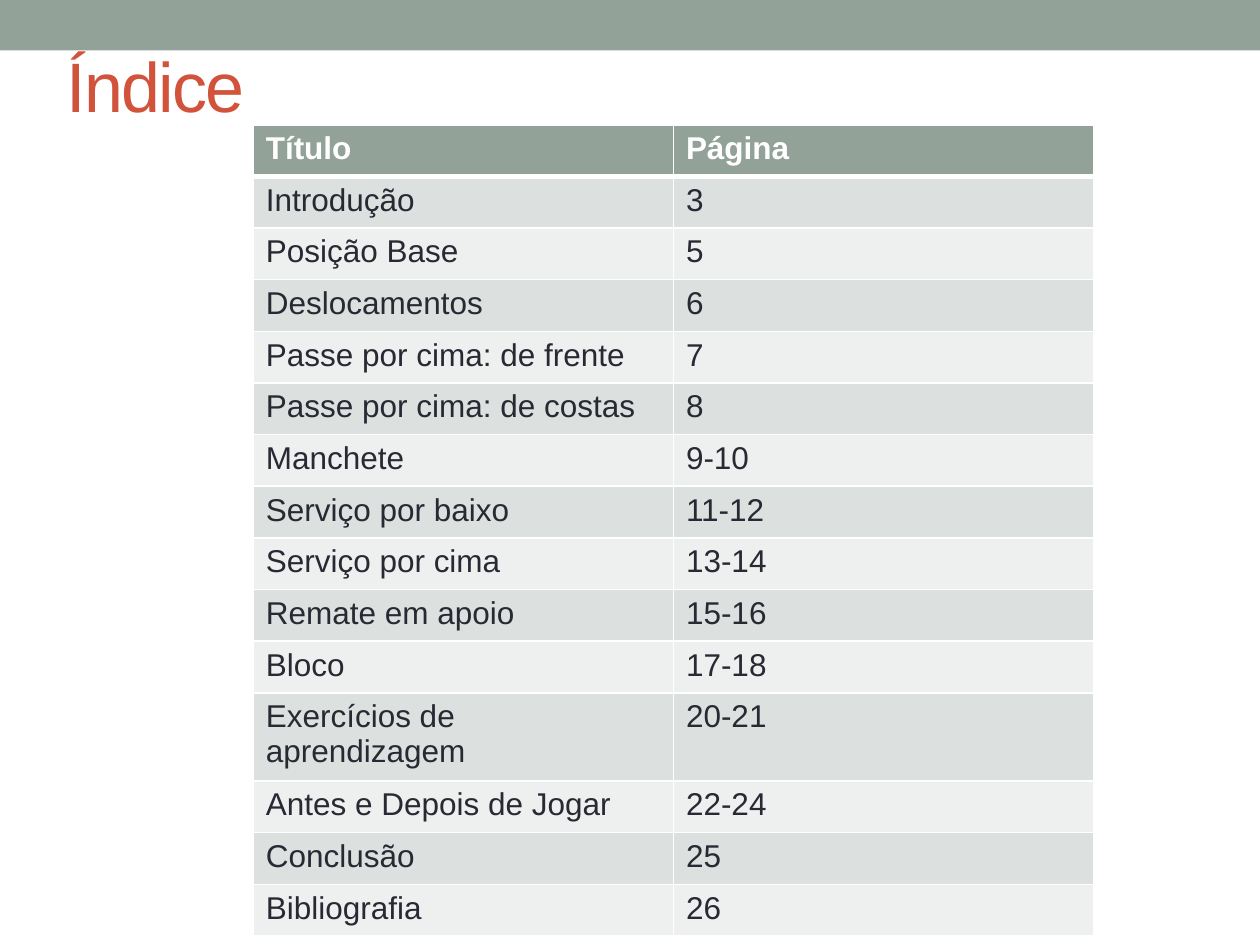
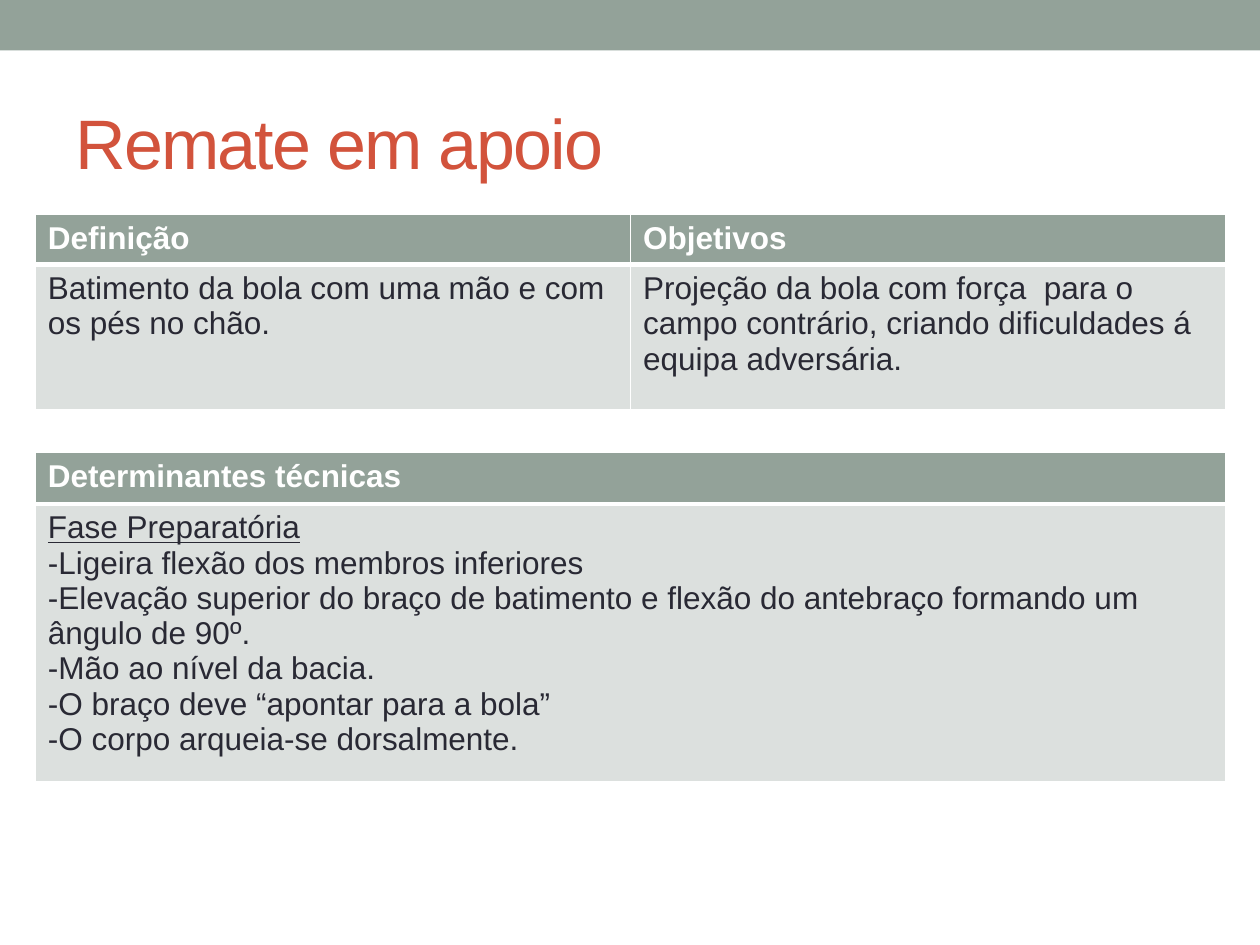
from pptx import Presentation
from pptx.dml.color import RGBColor
from pptx.enum.shapes import MSO_SHAPE
from pptx.enum.text import MSO_ANCHOR
from pptx.oxml.ns import qn
from pptx.util import Inches, Pt
from lxml.etree import SubElement

SAGE = RGBColor(0x93, 0xA2, 0x99)
RUST = RGBColor(0xD2, 0x53, 0x3C)
INK = RGBColor(0x29, 0x29, 0x34)
WHITE = RGBColor(0xFF, 0xFF, 0xFF)
ROW_FILLS = (RGBColor(0xDC, 0xE0, 0xDE), RGBColor(0xEE, 0xF0, 0xEF))
FONT = "Arial"

INDEX = [
    ("Título", "Página"),
    ("Introdução", "3"),
    ("Posição Base", "5"),
    ("Deslocamentos", "6"),
    ("Passe por cima: de frente", "7"),
    ("Passe por cima: de costas", "8"),
    ("Manchete", "9-10"),
    ("Serviço por baixo", "11-12"),
    ("Serviço por cima", "13-14"),
    ("Remate em apoio", "15-16"),
    ("Bloco", "17-18"),
    ("Exercícios de aprendizagem", "20-21"),
    ("Antes e Depois de Jogar", "22-24"),
    ("Conclusão", "25"),
    ("Bibliografia", "26"),
]
DEFINITION = [
    ("Definição", "Objetivos"),
    ("Batimento da bola com uma mão e com os pés no chão.",
     "Projeção da bola com força  para o campo contrário, "
     "criando dificuldades á equipa adversária."),
]
TECHNIQUE_STEPS = [
    "Fase Preparatória",
    "-Ligeira flexão dos membros inferiores",
    "-Elevação superior do braço de batimento e flexão do antebraço "
    "formando um ângulo de 90º.",
    "-Mão ao nível da bacia.",
    "-O braço deve “apontar para a bola”",
    "-O corpo arqueia-se dorsalmente.",
]
TECHNIQUE = [("Determinantes técnicas",), ("\n".join(TECHNIQUE_STEPS),)]


def write(tf, text, size=18, color=INK, bold=False, spacing=None):
    """Fill a text frame, one paragraph for each line of text."""
    for i, line in enumerate(text.split("\n")):
        p = tf.add_paragraph() if i else tf.paragraphs[0]
        r = p.add_run()
        r.text = line
        r.font.name = FONT
        r.font.size = Pt(size)
        r.font.bold = bold
        r.font.color.rgb = color
        if spacing is not None:
            r._r.get_or_add_rPr().set("spc", str(spacing * 100))


def set_borders(cell, top=1, bottom=1):
    """Draw white cell borders; widths are in points."""
    tcPr = cell._tc.get_or_add_tcPr()
    widths = {"a:lnL": 1, "a:lnR": 1, "a:lnT": top, "a:lnB": bottom}
    for tag, width in widths.items():
        ln = SubElement(tcPr, qn(tag), w=str(Pt(width)))
        fill = SubElement(ln, qn("a:solidFill"))
        SubElement(fill, qn("a:srgbClr"), val=str(WHITE))


def add_band(s):
    band = s.shapes.add_shape(MSO_SHAPE.RECTANGLE, 0, 0, Inches(10), Inches(0.4))
    band.shadow.inherit = False
    band.fill.solid()
    band.fill.fore_color.rgb = SAGE
    band.line.fill.background()


def add_title(s, text, left, top):
    sp = s.shapes.add_textbox(Inches(left), Inches(top), Inches(9), Inches(1.08))
    tf = sp.text_frame
    tf.word_wrap = True
    tf.vertical_anchor = MSO_ANCHOR.MIDDLE
    write(tf, text, size=40, color=RUST, spacing=-1)


def add_grid(s, rows, left, top, width, heights):
    """Add a table with a sage header row and alternating body rows."""
    frame = s.shapes.add_table(len(rows), len(rows[0]), Inches(left), Inches(top),
                               Inches(width), Inches(sum(heights)))
    table = frame.table
    table.first_row = table.horz_banding = False
    for i, (texts, height) in enumerate(zip(rows, heights)):
        table.rows[i].height = Inches(height)
        header = i == 0
        for j, text in enumerate(texts):
            cell = table.cell(i, j)
            set_borders(cell, top=3 if i == 1 else 1, bottom=3 if header else 1)
            cell.fill.solid()
            cell.fill.fore_color.rgb = SAGE if header else ROW_FILLS[(i - 1) % 2]
            write(cell.text_frame, text, color=WHITE if header else INK, bold=header)
    return table


def new_slide(prs, title, left, top):
    s = prs.slides.add_slide(prs.slide_layouts[6])
    add_band(s)
    add_title(s, title, left, top)
    return s


def index_slide(prs):
    s = new_slide(prs, "Índice", 0.43, 0.13)
    add_grid(s, INDEX, 2.01, 0.99, 6.67, [0.41] * len(INDEX))


def spike_slide(prs):
    s = new_slide(prs, "Remate em apoio", 0.5, 0.58)
    add_grid(s, DEFINITION, 0.28, 1.7, 9.45, [0.35, 1.15])
    technique = add_grid(s, TECHNIQUE, 0.28, 3.59, 9.45, [0.41, 2.05])
    heading = technique.cell(1, 0).text_frame.paragraphs[0]
    heading.runs[0].font.underline = True


def main():
    prs = Presentation()
    prs.slide_width, prs.slide_height = Inches(10), Inches(7.5)
    index_slide(prs)
    spike_slide(prs)
    prs.save("out.pptx")


if __name__ == "__main__":
    main()
